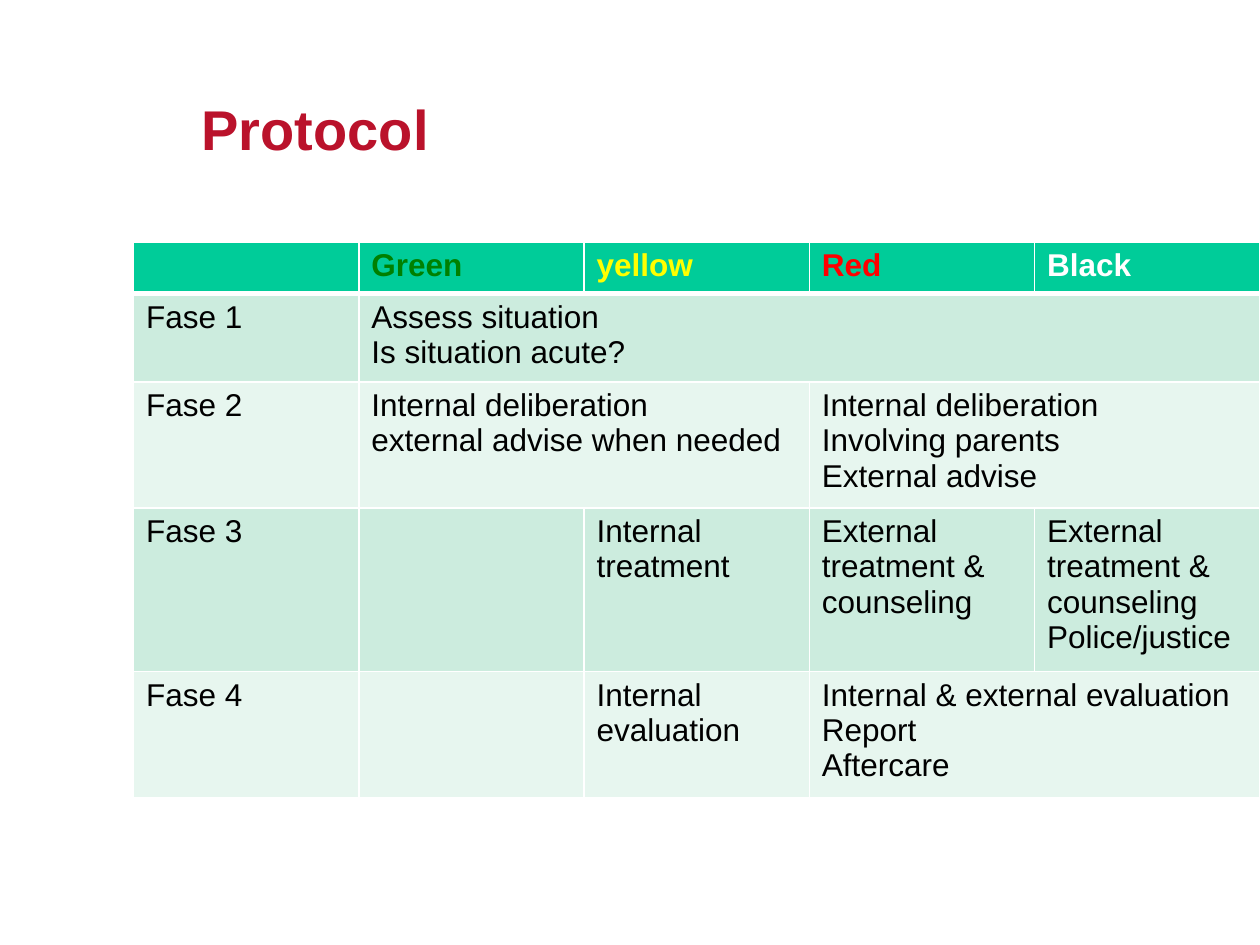
from lxml import etree
from pptx import Presentation, util as u
from pptx.dml.color import RGBColor
from pptx.enum import text
from pptx.oxml import ns

COLOURS = {
    "title": "BA122B", "header": "00CC99", "odd": "CCECDE", "even": "E7F6EF",
    "white": "FFFFFF", "black": "000000", "green": "008000",
    "yellow": "FFFF00", "red": "FF0000",
}
HEADINGS = [("", "white"), ("Green", "green"), ("yellow", "yellow"),
            ("Red", "red"), ("Black", "white")]
# Each phase lists its cells as (text, number of columns).
PHASES = [
    [("Fase 1", 1), ("Assess situation\nIs situation acute?", 4)],
    [("Fase 2", 1), ("Internal deliberation\nexternal advise when needed", 2),
     ("Internal deliberation\nInvolving parents\nExternal advise", 2)],
    [("Fase 3", 1), ("", 1), ("Internal treatment", 1),
     ("External treatment & counseling", 1),
     ("External treatment & counseling\nPolice/justice", 1)],
    [("Fase 4", 1), ("", 1), ("Internal evaluation", 1),
     ("Internal & external evaluation\nReport\nAftercare", 2)],
]
ROW_HEIGHTS = [0.41, 0.7, 1, 1.3, 1]


class ProtocolPage:
    font = "Arial"

    def __init__(self, deck):
        self.width, self.height = deck.slide_width, deck.slide_height
        self.slide = deck.slides.add_slide(deck.slide_layouts[5])

    def place(self, left, top, width, height):
        """Turn shares of the slide's size into lengths."""
        return (int(self.width * left), int(self.height * top),
                int(self.width * width), int(self.height * height))

    def style(self, frame, size, colour, bold):
        for para in frame.paragraphs:
            para.alignment = text.PP_ALIGN.LEFT
            para.font.name, para.font.size = self.font, u.Pt(size)
            para.font.bold = bold
            para.font.color.rgb = RGBColor.from_string(COLOURS[colour])

    def title(self, words, *shares):
        box = self.slide.shapes.title
        box.left, box.top, box.width, box.height = self.place(*shares)
        frame = box.text_frame
        frame.text = words
        frame.auto_size = text.MSO_AUTO_SIZE.NONE
        frame.vertical_anchor = text.MSO_ANCHOR.MIDDLE
        self.style(frame, 32, "title", True)

    def table(self, row_heights, columns, *shares):
        frame = self.slide.shapes.add_table(
            len(row_heights), columns, *self.place(*shares))
        for row, height in zip(frame.table.rows, row_heights):
            row.height = u.Inches(height)
        return frame.table

    def borders(self, cell, bottom):
        """Draw white cell borders, with the bottom one in its own width."""
        props = cell._tc.get_or_add_tcPr()
        for index, side in enumerate("LRTB"):
            width = u.Pt(bottom if side == "B" else 1)
            line = etree.Element(ns.qn(f"a:ln{side}"), w=str(width))
            fill = etree.SubElement(line, ns.qn("a:solidFill"))
            etree.SubElement(fill, ns.qn("a:srgbClr"), val=COLOURS["white"])
            props.insert(index, line)

    def cell(self, cell, words, fill, colour="black", bold=False, bottom=1):
        cell.text = words
        cell.fill.solid()
        cell.fill.fore_color.rgb = RGBColor.from_string(COLOURS[fill])
        self.borders(cell, bottom)
        self.style(cell.text_frame, 18, colour, bold)


def main():
    deck = Presentation()
    deck.slide_width, deck.slide_height = u.Inches(10), u.Inches(7.5)
    page = ProtocolPage(deck)
    page.title("Protocol", 0.15, 0.052, 0.808, 0.167)

    table = page.table(ROW_HEIGHTS, len(HEADINGS), 0.106, 0.256, 0.894, 0.588)
    for column, (words, colour) in enumerate(HEADINGS):
        page.cell(table.cell(0, column), words, "header", colour, True, 3)
    for row, phase in enumerate(PHASES, start=1):
        column = 0
        for words, span in phase:
            for part in range(column, column + span):
                page.cell(table.cell(row, part), words if part == column else "",
                          "odd" if row % 2 else "even")
            if span > 1:
                table.cell(row, column).merge(table.cell(row, column + span - 1))
            column += span
    deck.save("out.pptx")


if __name__ == "__main__":
    main()
